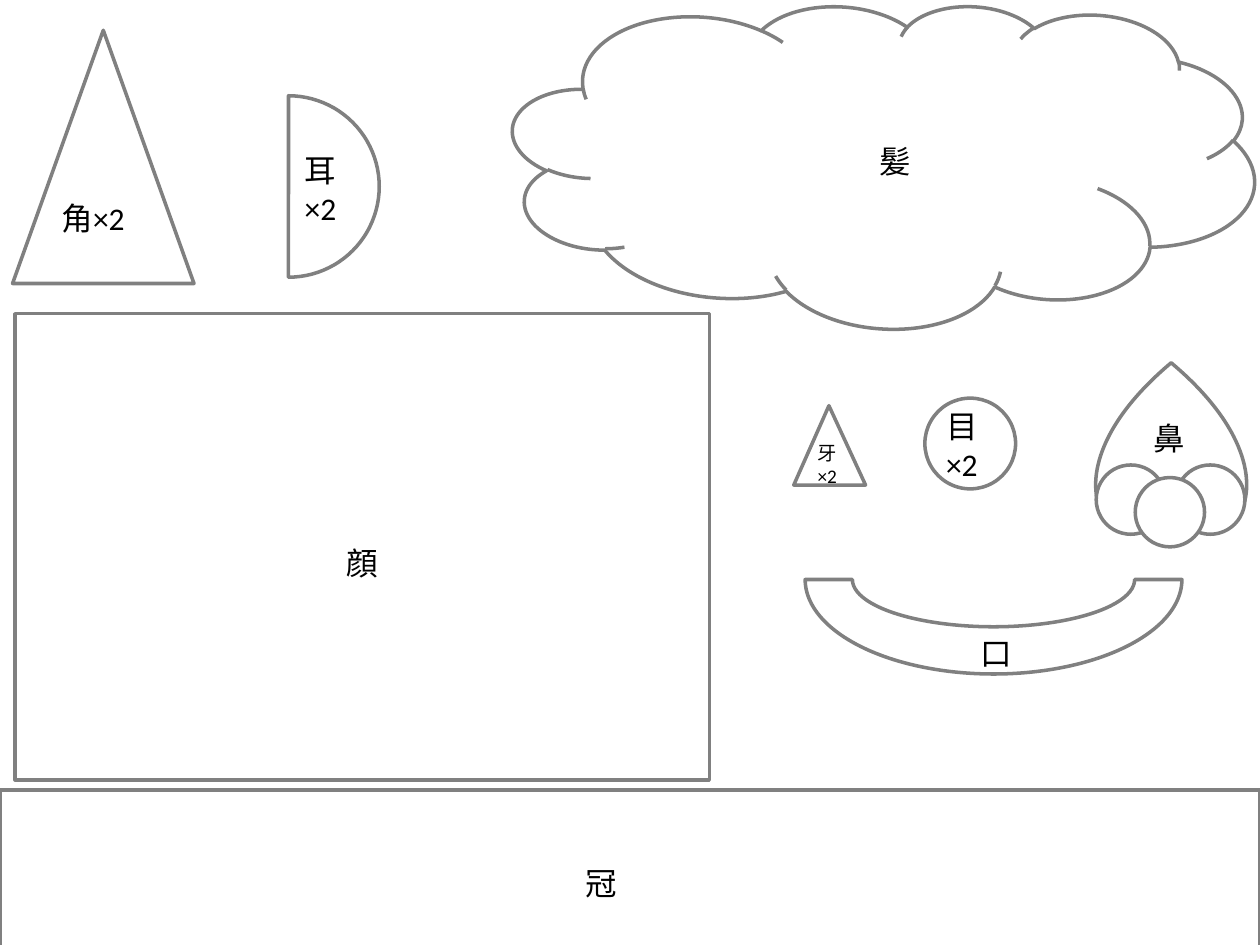
from pptx import Presentation
from pptx.dml.color import RGBColor
from pptx.enum.shapes import MSO_SHAPE
from pptx.enum.text import MSO_AUTO_SIZE
from pptx.util import Inches, Pt

RECT = MSO_SHAPE.RECTANGLE
PIE = MSO_SHAPE.PIE
HEART = MSO_SHAPE.HEART
OVAL = MSO_SHAPE.OVAL
CLOUD = MSO_SHAPE.CLOUD
PEAK = MSO_SHAPE.ISOSCELES_TRIANGLE
ARC = MSO_SHAPE.BLOCK_ARC
GROW = MSO_AUTO_SIZE.SHAPE_TO_FIT_TEXT

COLORS = {"line": "808080", "fill": "FFFFFF", "text": "000000"}


class Sheet:
    def __init__(self, slide):
        self.slide = slide
        self.width = Pt(2)
        self.frame = {"word_wrap": False, "auto_size": GROW}
        self.font = {"name": "Calibri", "size": Pt(18)}

    def color(self, key):
        return RGBColor.from_string(COLORS[key])

    def group(self):
        return self.slide.shapes.add_group_shape()

    def shape(self, kind, box, host=None, solid=False, turn=0, flip=False, bends=()):
        host = host or self.slide
        item = host.shapes.add_shape(kind, *map(Inches, box))
        item.shadow.inherit = False
        if solid:
            item.fill.solid()
            item.fill.fore_color.rgb = self.color("fill")
        else:
            item.fill.background()
        item.line.color.rgb = self.color("line")
        item.line.width = self.width
        item.rotation = turn
        for i, bend in enumerate(bends):
            item.adjustments[i] = bend
        if flip:
            item._element.spPr.xfrm.set("flipV", "1")

    def label(self, lines, box, size=18):
        frame = self.slide.shapes.add_textbox(*map(Inches, box)).text_frame
        for key, value in self.frame.items():
            setattr(frame, key, value)
        frame.text = "\n".join(lines)
        style = {**self.font, "size": Pt(size)}
        for para in frame.paragraphs:
            for key, value in style.items():
                setattr(para.font, key, value)
            para.font.color.rgb = self.color("text")


def main():
    deck = Presentation()
    deck.slide_width, deck.slide_height = Inches(10), Inches(7.5)
    sheet = Sheet(deck.slides.add_slide(deck.slide_layouts[6]))

    sheet.shape(RECT, (0.12, 2.49, 5.51, 3.7))
    sheet.shape(PIE, (1.57, 0.76, 1.44, 1.44), turn=270, bends=(0, 108.09))

    nose = sheet.group()
    sheet.shape(HEART, (8.7, 2.88, 1.19, 1.36), nose, solid=True, flip=True)
    for left, top in ((8.7, 3.69), (9.33, 3.69), (9.01, 3.79)):
        sheet.shape(OVAL, (left, top, 0.55, 0.55), nose, solid=True)

    sheet.shape(CLOUD, (4.06, 0, 5.9, 2.6), turn=3.9)
    sheet.shape(PEAK, (0.1, 0.24, 1.44, 2.01))
    sheet.shape(ARC, (6.39, 3.85, 2.99, 1.5), flip=True)
    sheet.shape(PEAK, (6.3, 3.22, 0.57, 0.63), solid=True, bends=(0.49,))
    sheet.shape(OVAL, (7.34, 3.16, 0.72, 0.72))
    sheet.shape(RECT, (0, 6.27, 10, 1.26))

    sheet.label(["角×2"], (0.39, 1.53, 0.83, 0.4))
    for name, left, top in (
        ("髪", 6.88, 1.08),
        ("顔", 2.65, 4.27),
        ("鼻", 9.06, 3.28),
        ("口", 7.68, 4.98),
        ("冠", 4.55, 6.81),
    ):
        sheet.label([name], (left, top, 0.45, 0.4))
    for name, box, size in (
        ("耳", (2.32, 1.15, 0.58, 0.71), 18),
        ("目", (7.41, 3.18, 0.58, 0.71), 18),
        ("牙", (6.39, 3.45, 0.44, 0.47), 11),
    ):
        sheet.label([name, "×2"], box, size)

    deck.save("out.pptx")


if __name__ == "__main__":
    main()
